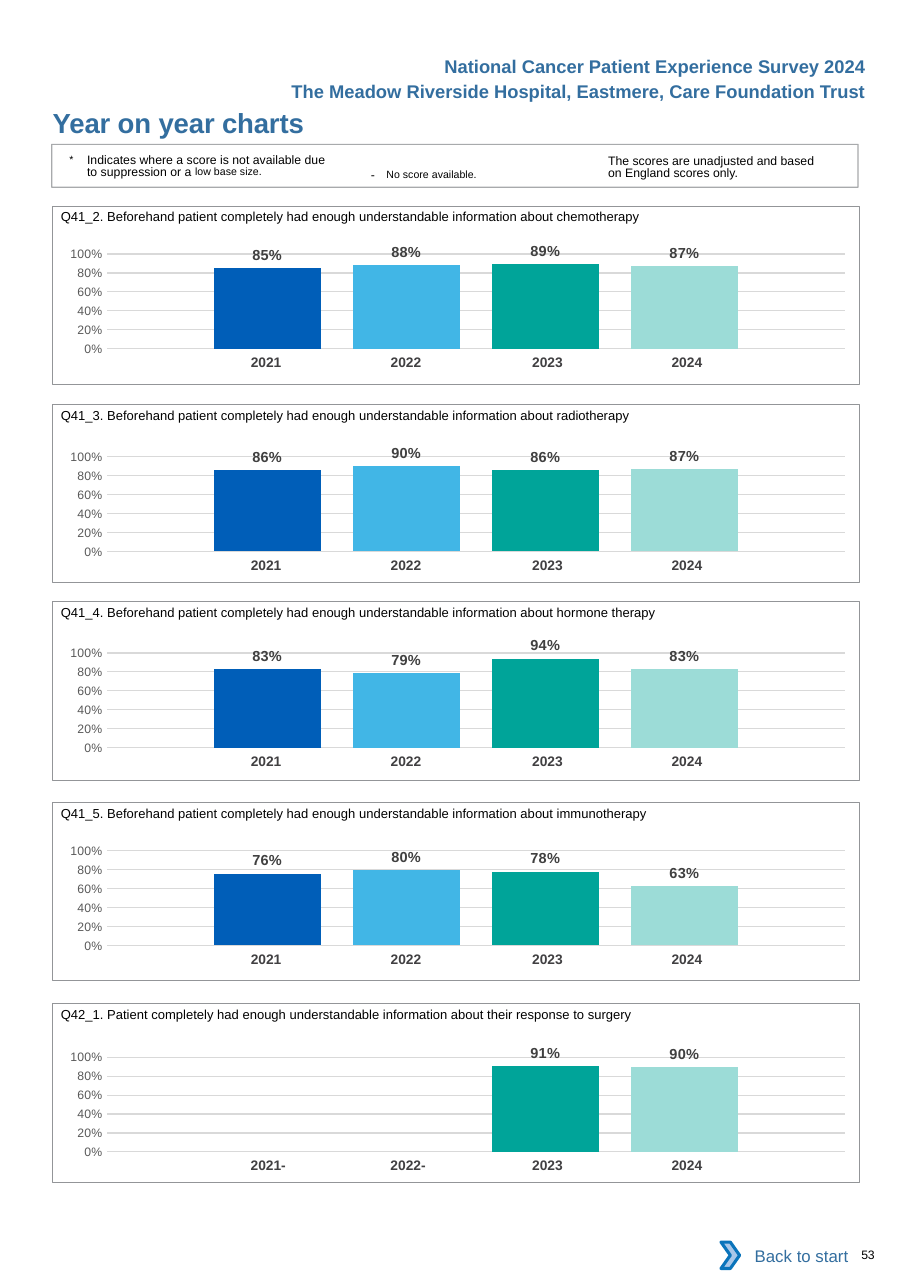
from lxml import etree
from pptx import Presentation
from pptx import util as u
from pptx.chart.data import CategoryChartData
from pptx.dml.color import RGBColor
from pptx.enum import chart as charts, shapes, text
from pptx.oxml import parse_xml
from pptx.oxml.ns import nsdecls, qn

HEADING = RGBColor(0x33, 0x6E, 0x9F)
BLACK = RGBColor(0, 0, 0)
WHITE = RGBColor(0xFF, 0xFF, 0xFF)
FRAME = RGBColor(0x93, 0x95, 0x98)
YEAR = RGBColor(0x41, 0x40, 0x42)
LABEL = RGBColor(0x40, 0x40, 0x40)
AXIS = RGBColor(0x59, 0x59, 0x59)
GRID = RGBColor(0xD9, 0xD9, 0xD9)
ARROW_FILL = RGBColor(0xA8, 0xC7, 0xE9)
ARROW_LINE = RGBColor(0x0A, 0x74, 0xBB)
BARS = [RGBColor(0x00, 0x5E, 0xB8), RGBColor(0x41, 0xB6, 0xE6),
        RGBColor(0x00, 0xA4, 0x99), RGBColor(0x9C, 0xDC, 0xD7)]
FONT = "Arial"
NO_TABLE_STYLE = "{2D5ABB26-0587-4C30-8999-92F81FD0307C}"
RIGHT = text.PP_ALIGN.RIGHT
BEFOREHAND = "Beforehand patient completely had enough understandable information about "

# Question, frame top, chart top, scores for 2021 to 2024
QUESTIONS = [
    ("Q41_2. " + BEFOREHAND + "chemotherapy", 134.6, 152.6, (0.85, 0.88, 0.89, 0.87)),
    ("Q41_3. " + BEFOREHAND + "radiotherapy", 264.2, 285.1, (0.86, 0.90, 0.86, 0.87)),
    ("Q41_4. " + BEFOREHAND + "hormone therapy", 393.1, 413.3, (0.83, 0.79, 0.94, 0.83)),
    ("Q41_5. " + BEFOREHAND + "immunotherapy", 524.2, 542.6, (0.76, 0.80, 0.78, 0.63)),
    ("Q42_1. Patient completely had enough understandable information about "
     "their response to surgery", 655.9, 677.5, (None, None, 0.91, 0.90)),
]


class Page:
    def __init__(self, slide):
        self.slide = slide

    def style(self, font, size, color, bold=False):
        font.name, font.size, font.bold = FONT, u.Pt(size), bold
        font.color.rgb = color

    def run(self, paragraph, words, size, color=BLACK, bold=False, raised=0, spacing=0):
        run = paragraph.add_run()
        run.text = words
        self.style(run.font, size, color, bold)
        properties = run._r.get_or_add_rPr()
        if raised:
            properties.set("baseline", str(raised * 1000))
        if spacing:
            properties.set("spc", str(round(spacing * 100)))

    def text(self, box, runs, insets=(0, 0, 0, 0), before=0, line=None, align=None, hanging=0):
        """Each run is (words, size, and optional run settings)."""
        frame = self.slide.shapes.add_textbox(*map(u.Pt, box)).text_frame
        frame.word_wrap = True
        (frame.margin_left, frame.margin_top,
         frame.margin_right, frame.margin_bottom) = map(u.Pt, insets)
        paragraph = frame.paragraphs[0]
        paragraph.space_before = u.Pt(before)
        paragraph.alignment = align
        if line:
            paragraph.line_spacing = u.Pt(line)
        if hanging:
            properties = paragraph._p.get_or_add_pPr()
            properties.set("marL", str(u.Pt(hanging)))
            properties.set("indent", str(-u.Pt(hanging)))
        for words, size, *settings in runs:
            self.run(paragraph, words, size, **(settings[0] if settings else {}))

    def shape(self, kind, box, fill=None, line=None, width=0.5):
        shape = self.slide.shapes.add_shape(kind, *map(u.Pt, box))
        shape.shadow.inherit = False
        if fill is None:
            shape.fill.background()
        else:
            shape.fill.solid()
            shape.fill.fore_color.rgb = fill
        if line is None:
            shape.line.fill.background()
        else:
            shape.line.color.rgb = line
            shape.line.width = u.Pt(width)
        return shape

    def years(self, top, scores):
        widths = (91.4, 91.4, 96.5, 91.4)
        table = self.slide.shapes.add_table(
            1, len(widths), u.Pt(124.6), u.Pt(top), u.Pt(sum(widths)), u.Pt(19.4)).table
        table.first_row = table.horz_banding = False
        table._tbl.tblPr.find(qn("a:tableStyleId")).text = NO_TABLE_STYLE
        for index, (width, score, right) in enumerate(zip(widths, scores, (0, 0, 2.9, 8.6))):
            table.columns[index].width = u.Pt(width)
            cell = table.cell(0, index)
            cell.fill.background()
            cell.margin_left = u.Pt(10 if score is None else 7.2)
            cell.margin_right = u.Pt(right)
            cell.margin_top = cell.margin_bottom = u.Pt(3.6)
            paragraph = cell.text_frame.paragraphs[0]
            paragraph.alignment = text.PP_ALIGN.CENTER
            year = str(2021 + index) + ("-" if score is None else "")
            self.run(paragraph, year, 9, YEAR, bold=True)

    def chart(self, top, scores):
        data = CategoryChartData(number_format="0%")
        data.categories = ["1"]
        for index, score in enumerate(scores, 1):
            data.add_series(f"Series {index}", [score])
        chart = self.slide.shapes.add_chart(
            charts.XL_CHART_TYPE.COLUMN_CLUSTERED,
            u.Pt(28.3), u.Pt(top), u.Pt(527), u.Pt(92.9), data).chart
        chart.has_legend = chart.has_title = False
        chart.font.name, chart.font.size = "Calibri", u.Pt(10)
        chart.font.color.rgb = BLACK

        # Axes
        chart.category_axis.visible = False
        axis = chart.value_axis
        axis.minimum_scale, axis.maximum_scale, axis.major_unit = 0, 1, 0.2
        axis.major_tick_mark = axis.minor_tick_mark = charts.XL_TICK_MARK.NONE
        axis.format.line.fill.background()
        axis.major_gridlines.format.line.color.rgb = GRID
        axis.major_gridlines.format.line.width = u.Pt(0.75)
        axis.tick_labels.number_format = "0%"
        axis.tick_labels.number_format_is_linked = False
        self.style(axis.tick_labels.font, 8, AXIS)

        # Bars and their labels
        plot = chart.plots[0]
        plot.gap_width, plot.overlap, plot.vary_by_categories = 200, -30, False
        for series, color in zip(plot.series, BARS):
            series.format.fill.solid()
            series.format.fill.fore_color.rgb = color
            labels = series.data_labels
            labels.show_value = True
            labels.position = charts.XL_LABEL_POSITION.OUTSIDE_END
            labels.number_format, labels.number_format_is_linked = "0%", False
            self.style(labels.font, 9.5, LABEL, bold=True)

        # Fixed plot area
        area = chart._chartSpace.chart.plotArea
        for old in area.findall(qn("c:layout")):
            area.remove(old)
        layout = parse_xml(f"<c:layout {nsdecls('c')}><c:manualLayout/></c:layout>")
        for tag, value in (("layoutTarget", "inner"), ("xMode", "edge"), ("yMode", "edge"),
                           ("x", 0.079), ("y", 0.145), ("w", 0.915), ("h", 0.666)):
            etree.SubElement(layout[0], qn(f"c:{tag}")).set("val", str(value))
        area.insert(0, layout)


def main():
    presentation = Presentation()
    presentation.slide_width, presentation.slide_height = u.Pt(594.72), u.Pt(841.68)
    page = Page(presentation.slides.add_slide(presentation.slide_layouts[6]))
    rectangle = shapes.MSO_SHAPE.RECTANGLE
    heading = {"color": HEADING, "bold": True}

    # Headings
    for top, words in ((32.6, "National Cancer Patient Experience Survey 2024"),
                       (49, "The Meadow Riverside Hospital, Eastmere, Care Foundation Trust")):
        page.text((141, top, 432, 21.6), [(words, 12, heading)], (7.2, 3.6, 7.2, 3.6), align=RIGHT)
    page.text((34.5, 69.1, 324, 21.6),
              [("Year on year charts", 18, {**heading, "spacing": -0.1})], before=4.1)

    # Notes on the scores
    notes = page.shape(rectangle, (33.8, 94.3, 527, 28.1), line=FRAME, width=0.75)
    color = notes.line._ln.find(".//" + qn("a:srgbClr"))
    etree.SubElement(color, qn("a:alpha")).set("val", "80000")
    page.text((45.4, 99.4, 171, 20),
              [("*\t", 12, {"raised": 3}),
               ("Indicates where a score is not available due to suppression or a ", 8),
               ("low base size.", 12, {"raised": 7})],
              (0, 2.2, 0, 0), before=2.5, line=8.1, hanging=11.5)
    page.text((235.4, 101.5, 131.8, 17.3),
              [("- ", 8, {"spacing": 2.6}), ("No score available.", 12, {"raised": 3})],
              (7.2, 3.6, 7.2, 3.6), before=2.1)
    page.text((397.4, 99.4, 141, 19.4),
              [("The scores are unadjusted and based on England scores only.", 8)],
              (0, 2.2, 0, 0), before=2.5, line=8.1)

    # One framed chart per question
    for question, frame_top, chart_top, scores in QUESTIONS:
        page.years(chart_top + 75.9, scores)
        page.chart(chart_top, scores)
        page.shape(rectangle, (34.5, frame_top, 527, 116.6), line=FRAME)
        page.text((39.8, frame_top - 4.6, 515, 17.3), [(question, 8.5)],
                  (0, 6.5, 0, 0), before=6.8)

    # Footer
    back = page.shape(rectangle, (476.6, 805.2, 85, 30.2), fill=WHITE)
    back.text_frame.vertical_anchor = text.MSO_ANCHOR.MIDDLE
    paragraph = back.text_frame.paragraphs[0]
    paragraph.alignment = RIGHT
    page.run(paragraph, "Back to start", 11, HEADING)
    page.shape(shapes.MSO_SHAPE.CHEVRON, (471.2, 811.7, 12.2, 17.3), ARROW_FILL, ARROW_LINE, 2)
    page.text((555.8, 815.3, 36.7, 9.4), [("53", 8, {"spacing": -0.2})], (7.2, 0, 0, 0))

    presentation.save("out.pptx")


if __name__ == "__main__":
    main()
